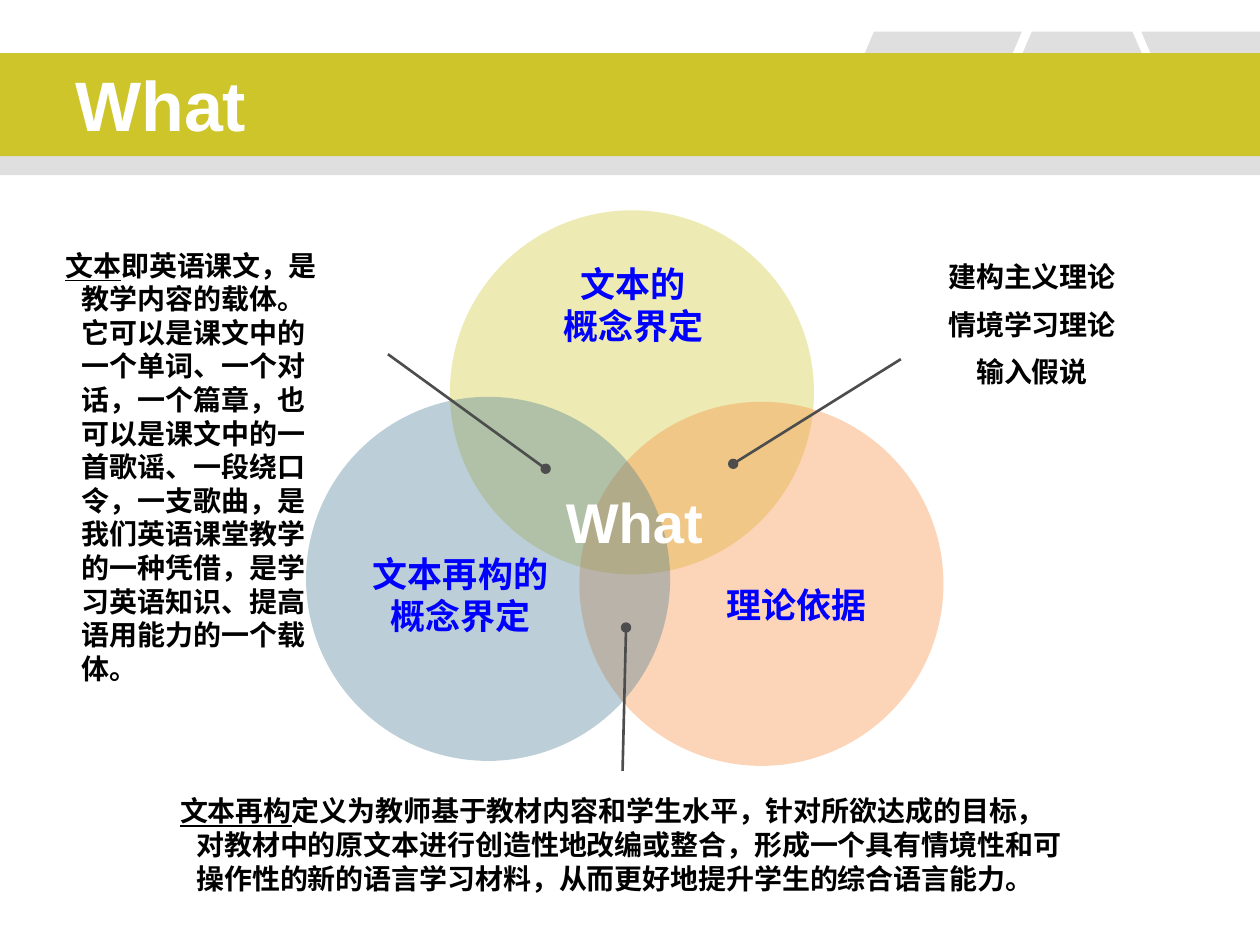
from lxml.etree import SubElement
from pptx import Presentation
from pptx.dml.color import RGBColor
from pptx.enum.shapes import MSO_CONNECTOR, MSO_SHAPE
from pptx.enum.text import MSO_ANCHOR, PP_ALIGN
from pptx.oxml.ns import qn
from pptx.util import Cm, Pt

OLIVE = RGBColor(0xCD, 0xC5, 0x29)
ORANGE = RGBColor(0xF7, 0x86, 0x31)
TEAL = RGBColor(0x40, 0x77, 0x90)
GREY = RGBColor(0x80, 0x80, 0x80)
DARK = RGBColor(0x4D, 0x4D, 0x4D)
BLUE = RGBColor(0x00, 0x00, 0xFF)
BLACK = RGBColor(0x00, 0x00, 0x00)
WHITE = RGBColor(0xFF, 0xFF, 0xFF)
LATIN_FONT = "Arial"
CHINESE_FONT = "Noto Sans CJK SC"


def paint(shape, color, opacity=100):
    """Give a shape a flat fill with no line and no shadow."""
    shape.shadow.inherit = False
    shape.line.fill.background()
    shape.fill.solid()
    shape.fill.fore_color.rgb = color
    if opacity < 100:
        tint = shape.fill._xPr.find(qn("a:solidFill"))[0]
        SubElement(tint, qn("a:alpha"), val=str(opacity * 1000))


def add_preset(page, kind, box, color, opacity=100):
    """Add a painted preset shape."""
    shape = page.shapes.add_shape(kind, *map(Cm, box))
    paint(shape, color, opacity)
    return shape


def add_outline(page, points, color, opacity):
    """Add a painted closed polygon."""
    corners = [(Cm(x), Cm(y)) for x, y in points]
    builder = page.shapes.build_freeform(*corners[0], scale=1.0)
    builder.add_line_segments(corners[1:], close=True)
    paint(builder.convert_to_shape(), color, opacity)


def add_text(page, box, paragraphs, size, color, align=PP_ALIGN.LEFT,
             hanging=False, space=0, wrap=True, anchor=MSO_ANCHOR.TOP):
    """Add a bold text box whose paragraphs are lists of (text, underlined)."""
    frame = page.shapes.add_textbox(*map(Cm, box)).text_frame
    frame.word_wrap = wrap
    frame.vertical_anchor = anchor
    for index, runs in enumerate(paragraphs):
        para = frame.add_paragraph() if index else frame.paragraphs[0]
        para.alignment = align
        if index and space:
            para.space_before = Pt(space)
        if hanging:
            properties = para._p.get_or_add_pPr()
            properties.set("marL", str(Cm(0.33)))
            properties.set("indent", str(-Cm(0.33)))
        for text, underlined in runs:
            span = para.add_run()
            span.text = text
            span.font.size = Pt(size)
            span.font.bold = True
            span.font.name = LATIN_FONT
            span.font.color.rgb = color
            if underlined:
                span.font.underline = True
            SubElement(span._r.get_or_add_rPr(), qn("a:ea"), typeface=CHINESE_FONT)


def add_leader(page, start, end):
    """Add a line that starts with a round dot."""
    ends = [Cm(value) for value in (*start, *end)]
    leader = page.shapes.add_connector(MSO_CONNECTOR.STRAIGHT, *ends)
    leader.line.color.rgb = DARK
    leader.line.width = Pt(1.5)
    SubElement(leader.line._get_or_add_ln(), qn("a:headEnd"), type="oval")
    SubElement(leader._element.spPr, qn("a:effectLst"))


def add_header(page, left, top, width):
    """Draw the title band with its tabs and lower strip."""
    right, foot = left + width, top + 2.42
    add_preset(page, MSO_SHAPE.RECTANGLE, (left, top + 1.62, width, 1.27), GREY, 25)
    tab = add_preset(page, MSO_SHAPE.PARALLELOGRAM,
                     (left + 16.59, top, 4.01, 2.42), GREY, 25)
    tab.adjustments[0] = 0.425
    add_outline(page, [(left + 19.76, foot), (left + 20.8, top),
                       (left + 22.83, top), (left + 23.88, foot)], GREY, 25)
    add_outline(page, [(left + 23.01, top), (left + 24.03, foot),
                       (right, foot), (right, top)], GREY, 25)
    add_preset(page, MSO_SHAPE.RECTANGLE, (left, top + 0.43, width, 2.08), OLIVE)
    add_text(page, (left + 1.27, top + 0.55, 15.67, 1.78), [[("What", False)]],
             40, WHITE, anchor=MSO_ANCHOR.MIDDLE)


def add_venn(page, left, top, diameter):
    """Draw three overlapping circles with their leaders and labels."""
    circles = [(2.9, 0, OLIVE), (5.51, 3.86, ORANGE), (0, 3.76, TEAL)]
    leaders = [((4.83, 5.21), (1.65, 2.9)), ((8.61, 5.11), (11.99, 3)),
               ((6.45, 8.41), (6.38, 11.3))]
    labels = [(4.07, 0.92, ["文本的", "概念界定"]),
              (0.59, 6.78, ["文本再构的", "概念界定"]),
              (7.37, 7.39, ["理论依据"])]
    for x, y, color in circles:
        add_preset(page, MSO_SHAPE.OVAL,
                   (left + x, top + y, diameter, diameter), color, 35)
    for start, end in leaders:
        add_leader(page, *((left + x, top + y) for x, y in (start, end)))
    add_text(page, (left + 4.98, top + 5.46, 3.28, 1.6), [[("What", False)]],
             32, WHITE, PP_ALIGN.CENTER, wrap=False)
    for x, y, lines in labels:
        add_text(page, (left + x, top + y, 5.05, 0.22 + 0.87 * len(lines)),
                 [[(line, False)] for line in lines], 20, BLUE, PP_ALIGN.CENTER)


def add_definition(page, box, term, meaning):
    """Write an underlined term followed by its meaning."""
    add_text(page, box, [[(term, True), (meaning, False)]], 16, BLACK, hanging=True)


def add_theories(page, box, theories):
    """Write a centred list of theories."""
    add_text(page, box, [[(theory, False)] for theory in theories], 16, BLACK,
             PP_ALIGN.CENTER, hanging=True, space=8)


def main():
    """Build and save the deck."""
    deck = Presentation()
    deck.slide_width, deck.slide_height = Cm(25.4), Cm(19.05)
    page = deck.slides.add_slide(deck.slide_layouts[6])
    add_header(page, 0, 0.64, 25.4)
    add_venn(page, 6.17, 4.24, 7.34)
    add_definition(page, (1.07, 4.88, 5.69, 9.09), "文本",
                   "即英语课文，是教学内容的载体。它可以是课文中的一个单词、一个对话，"
                   "一个篇章，也可以是课文中的一首歌谣、一段绕口令，一支歌曲，"
                   "是我们英语课堂教学的一种凭借，是学习英语知识、提高语用能力的一个载体。")
    add_theories(page, (17.96, 5.11, 5.69, 2.97),
                 ["建构主义理论", "情境学习理论", "输入假说"])
    add_definition(page, (3.38, 15.88, 18.42, 2.29), "文本再构",
                   "定义为教师基于教材内容和学生水平，针对所欲达成的目标，"
                   "对教材中的原文本进行创造性地改编或整合，形成一个具有情境性和"
                   "可操作性的新的语言学习材料，从而更好地提升学生的综合语言能力。")
    deck.save("out.pptx")


if __name__ == "__main__":
    main()
